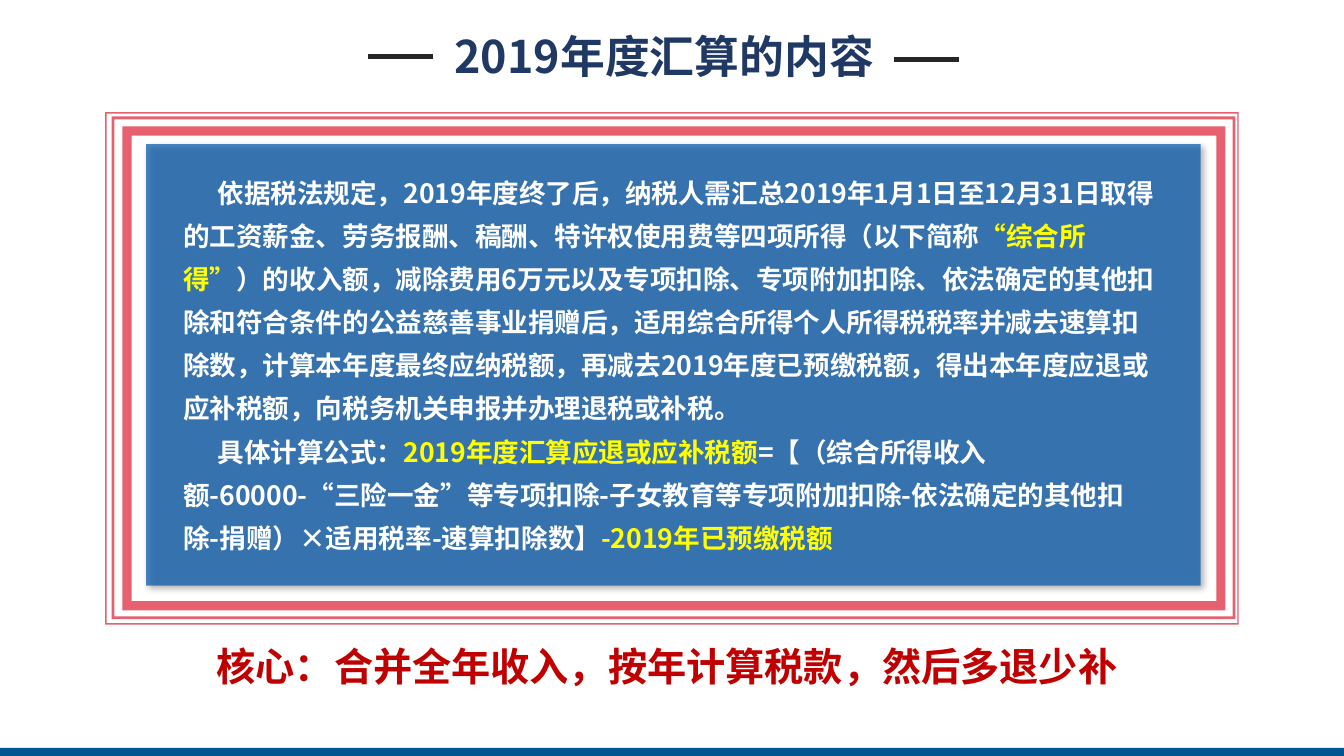
"""Build the slide on the content of the 2019 annual tax settlement."""
from lxml.etree import SubElement
from pptx import Presentation
from pptx.dml.color import RGBColor
from pptx.enum.shapes import MSO_CONNECTOR, MSO_SHAPE
from pptx.enum.text import PP_ALIGN
from pptx.oxml.ns import qn
from pptx.util import Pt

PX = 9144
FONT = "Noto Sans CJK SC"
COLORS = {
    "bar": "005490", "panel": "0056AB", "frame": "DE1D32", "title": "203864",
    "rule": "262626", "white": "FFFFFF", "yellow": "FFFF00", "core": "C00000",
    "shadow": "000000",
}

TITLE = [[("2019年度汇算的内容", "title")]]
BODY = [
    [
        ("依据税法规定，2019年度终了后，纳税人需汇总2019年1月1日至12月31日取得的工资薪金、"
         "劳务报酬、稿酬、特许权使用费等四项所得（以下简称", "white"),
        ("“综合所得”", "yellow"),
        ("）的收入额，减除费用6万元以及专项扣除、专项附加扣除、依法确定的其他扣除和符合条件的"
         "公益慈善事业捐赠后，适用综合所得个人所得税税率并减去速算扣除数，计算本年度最终应纳税额，"
         "再减去2019年度已预缴税额，得出本年度应退或应补税额，向税务机关申报并办理退税或补税。",
         "white"),
    ],
    [
        ("具体计算公式：", "white"),
        ("2019年度汇算应退或应补税额", "yellow"),
        ("=【（综合所得收入额-60000-“三险一金”等专项扣除-子女教育等专项附加扣除"
         "-依法确定的其他扣除-捐赠）×适用税率-速算扣除数】", "white"),
        ("-2019年已预缴税额", "yellow"),
    ],
]
CORE = [[("核心：合并全年收入，按年计算税款，然后多退少补", "core")]]

BAR = (0, 742, 1333, 8)
PANEL = (145, 143, 1046, 438)
FRAMES = [
    ((126, 130, 1085, 471), 6.5),
    ((112, 117, 1112, 496), 2),
    ((105, 112, 1123, 507), 1),
]
RULES = [(365, 429, 56), (887, 951, 59)]
RULE_WIDTH = 3
OPACITY = 70


def rgb(name):
    return RGBColor.from_string(COLORS[name])


def emu(box):
    return [value * PX for value in box]


def set_opacity(color_parent, percent):
    color = next(color_parent.iter(qn("a:srgbClr")))
    SubElement(color, qn("a:alpha"), val=str(percent * 1000))


def add_rectangle(slide, box, fill=None):
    shape = slide.shapes.add_shape(MSO_SHAPE.RECTANGLE, *emu(box))
    shape.shadow.inherit = False
    if fill:
        shape.fill.solid()
        shape.fill.fore_color.rgb = rgb(fill)
        shape.line.fill.background()
    else:
        shape.fill.background()
    return shape


def add_panel(slide):
    shape = add_rectangle(slide, PANEL, "panel")
    properties = shape.element.spPr
    set_opacity(properties.find(qn("a:solidFill")), OPACITY)
    shadow = SubElement(
        properties.find(qn("a:effectLst")), qn("a:outerShdw"),
        blurRad=str(Pt(4)), dist=str(Pt(3)), dir=str(45 * 60000),
        algn="tl", rotWithShape="0")
    SubElement(shadow, qn("a:srgbClr"), val=COLORS["shadow"])
    set_opacity(shadow, 40)


def add_frame(slide, box, width):
    line = add_rectangle(slide, box).line
    line.color.rgb = rgb("frame")
    line.width = Pt(width)
    outline = line._get_or_add_ln()
    set_opacity(outline, OPACITY)
    SubElement(outline, qn("a:miter"), lim="800000")


def add_rule(slide, left, right, y):
    rule = slide.shapes.add_connector(
        MSO_CONNECTOR.STRAIGHT, *emu((left, y, right, y)))
    rule.line.color.rgb = rgb("rule")
    rule.line.width = Pt(RULE_WIDTH)
    SubElement(rule.element.spPr, qn("a:effectLst"))


def add_text(slide, box, paragraphs, size, align=PP_ALIGN.LEFT,
             spacing=None, indent=0):
    frame = slide.shapes.add_textbox(*emu(box)).text_frame
    frame.word_wrap = True
    for index, runs in enumerate(paragraphs):
        paragraph = frame.add_paragraph() if index else frame.paragraphs[0]
        paragraph.alignment = align
        if spacing:
            paragraph.line_spacing = Pt(spacing)
        if index:
            paragraph.space_before = Pt(1)
        if indent:
            properties = paragraph._p.get_or_add_pPr()
            properties.set("marL", str(PX))
            properties.set("indent", str(indent * PX))
        paragraph.font.size = Pt(size)
        paragraph.font.bold = True
        paragraph.font.name = FONT
        SubElement(paragraph.font._element, qn("a:ea"), typeface=FONT)
        for text, color in runs:
            run = paragraph.add_run()
            run.text = text
            run.font.color.rgb = rgb(color)


def main():
    presentation = Presentation()
    presentation.slide_width = 1333 * PX
    presentation.slide_height = 750 * PX
    slide = presentation.slides.add_slide(presentation.slide_layouts[6])

    add_rectangle(slide, BAR, "bar")
    add_panel(slide)
    for box, width in FRAMES:
        add_frame(slide, box, width)
    add_text(slide, (429, 24, 460, 64), TITLE, 32, PP_ALIGN.CENTER)
    for rule in RULES:
        add_rule(slide, *rule)
    add_text(slide, (171, 160, 988, 403), BODY, 19, spacing=30.6, indent=34)
    add_text(slide, (205, 632, 949, 57), CORE, 28)

    presentation.save("out.pptx")


if __name__ == "__main__":
    main()
